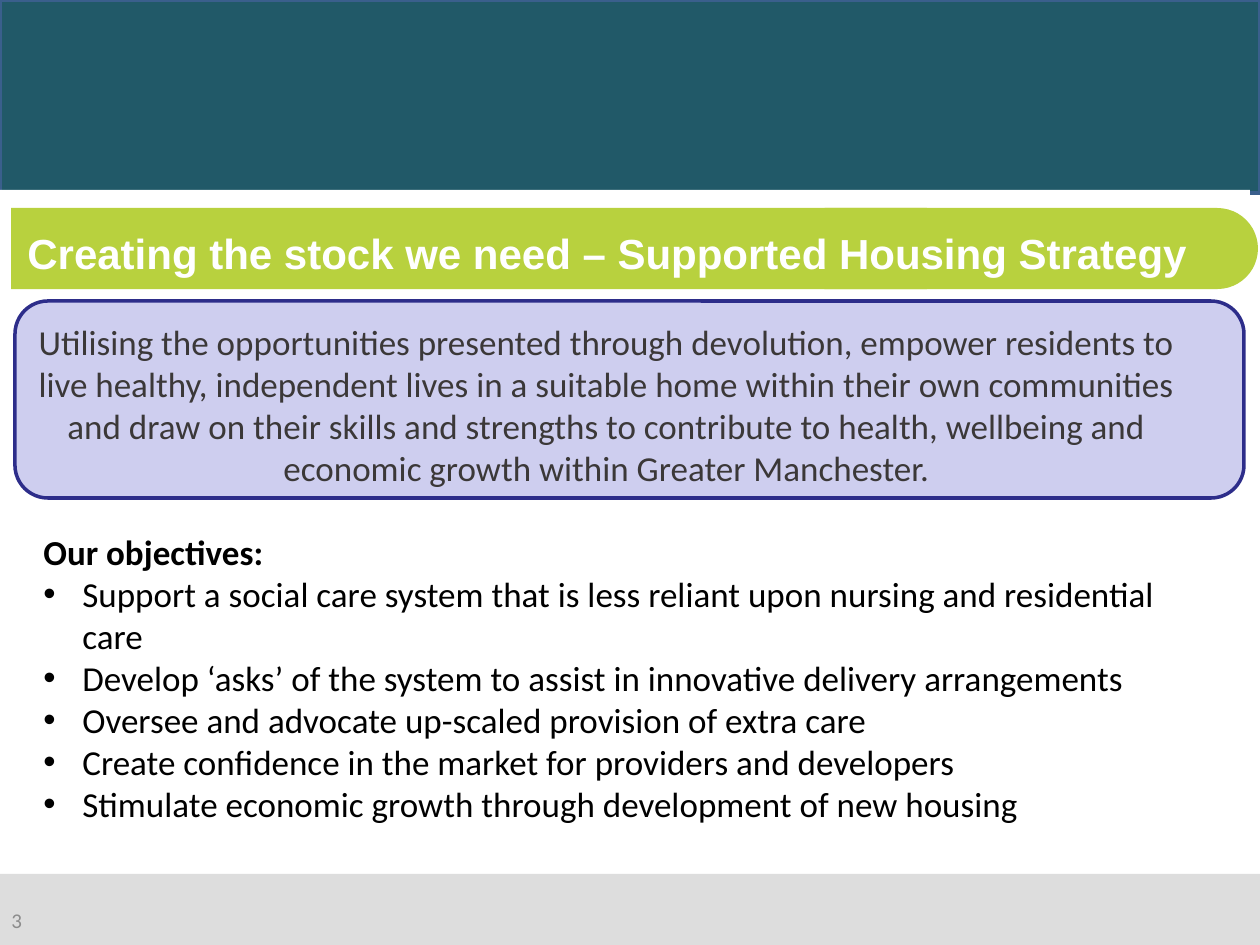
from lxml import etree
from pptx import Presentation
from pptx.dml.color import RGBColor
from pptx.enum.shapes import MSO_SHAPE
from pptx.enum.text import MSO_ANCHOR, PP_ALIGN
from pptx.oxml.ns import qn
from pptx.util import Pt

SCALE = 914400 / 126
WHITE = RGBColor(0xFF, 0xFF, 0xFF)
BLACK = RGBColor(0x00, 0x00, 0x00)
PALE_GREY = RGBColor(0xDD, 0xDD, 0xDD)
MID_GREY = RGBColor(0x8C, 0x8C, 0x8C)
DARK_GREY = RGBColor(0x3B, 0x38, 0x38)
TEAL = RGBColor(0x21, 0x59, 0x68)
STEEL_BLUE = RGBColor(0x3A, 0x5F, 0x8C)
LAVENDER = RGBColor(0xCE, 0xCE, 0xEF)
NAVY = RGBColor(0x2D, 0x2D, 0x8A)
LIME = RGBColor(0xB8, 0xD1, 0x3E)

deck = Presentation()
deck.slide_width = round(1260 * SCALE)
deck.slide_height = round(945 * SCALE)
page = deck.slides.add_slide(deck.slide_layouts[6])


def add_panel(kind, place, fill, line=None, corner=None):
    panel = page.shapes.add_shape(kind, *[round(length * SCALE) for length in place])
    panel.shadow.inherit = False
    panel.fill.solid()
    panel.fill.fore_color.rgb = fill
    if line is None:
        panel.line.fill.background()
    else:
        panel.line.color.rgb = line
        panel.line.width = Pt(2)
    if corner is not None:
        panel.adjustments[0] = corner


def add_text(place, lines, size, color, name="Calibri", bold=False):
    box = page.shapes.add_textbox(*[round(length * SCALE) for length in place])
    frame = box.text_frame
    frame.word_wrap = True
    frame.text = "\n".join(lines)
    for para in frame.paragraphs:
        para.font.size = Pt(size)
        para.font.name = name
        para.font.bold = bold
        para.font.color.rgb = color
    return frame


RECTANGLE, ROUNDED = MSO_SHAPE.RECTANGLE, MSO_SHAPE.ROUNDED_RECTANGLE

for top in (0, 874):
    add_panel(RECTANGLE, (0, top, 1260, 74), PALE_GREY)
add_panel(RECTANGLE, (0, 0, 1260, 193), TEAL, STEEL_BLUE)
number = add_text((-1, 895, 48, 50), ["3"], 12, MID_GREY)
number.vertical_anchor = MSO_ANCHOR.MIDDLE

add_panel(RECTANGLE, (0, 190, 1250, 355), WHITE)
add_panel(ROUNDED, (15, 301, 1229, 197), LAVENDER, NAVY)
vision = add_text((13, 314, 1187, 210), [
    "Utilising the opportunities presented through devolution, empower residents to "
    "live healthy, independent lives in a suitable home within their own communities "
    "and draw on their skills and strengths to contribute to health, wellbeing and "
    "economic growth within Greater Manchester.",
], 20, DARK_GREY)
vision.paragraphs[0].alignment = PP_ALIGN.CENTER

add_text((31, 524, 1186, 60), ["Our objectives:"], 20, BLACK, bold=True)
objectives = add_text((31, 566, 1186, 302), [
    "Support a social care system that is less reliant upon nursing and residential care",
    "Develop ‘asks’ of the system to assist in innovative delivery arrangements",
    "Oversee and advocate up-scaled provision of extra care",
    "Create confidence in the market for providers and developers",
    "Stimulate economic growth through development of new housing",
], 20, BLACK)
indent = round(39 * SCALE)
for para in objectives.paragraphs:
    settings = para._p.get_or_add_pPr()
    settings.set("marL", str(indent))
    settings.set("indent", str(-indent))
    bullet_font = etree.Element(qn("a:buFont"), typeface="Arial")
    bullet = etree.Element(qn("a:buChar"), char="•")
    settings.insert(0, bullet_font)
    settings.insert(1, bullet)

add_panel(ROUNDED, (11, 208, 916, 81), LIME, corner=0)
add_panel(ROUNDED, (784, 208, 474, 81), LIME, corner=0.5)
add_text((15, 221, 1207, 81), ["Creating the stock we need – Supported Housing Strategy"],
         24, WHITE, name="Arial", bold=True)

deck.save("out.pptx")
